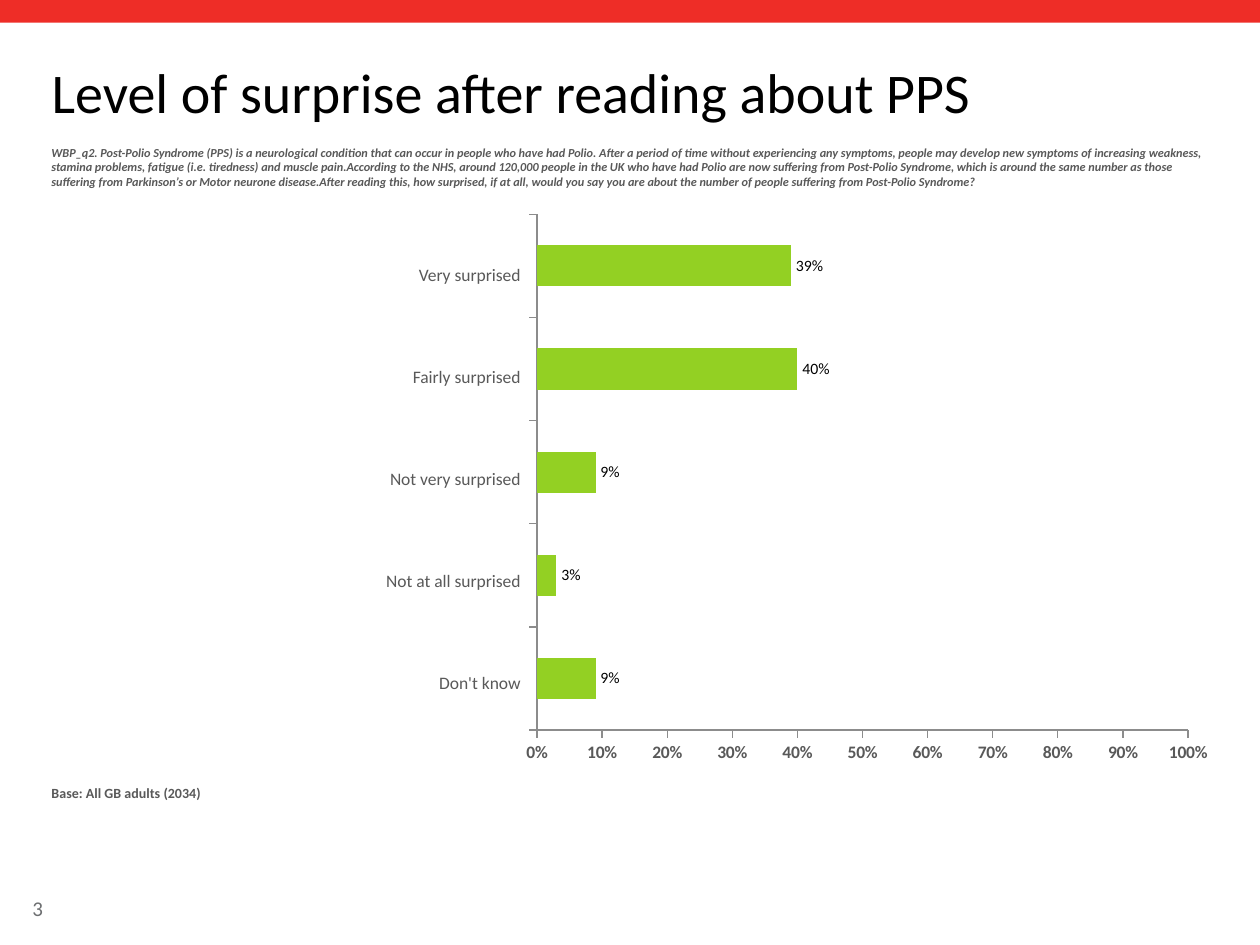
import pptx
import pptx.chart.data
import pptx.dml.color
import pptx.enum.chart
import pptx.enum.shapes
import pptx.enum.text
import pptx.oxml
import pptx.oxml.ns
import pptx.util

Inches = pptx.util.Inches
Pt = pptx.util.Pt
RGB = pptx.dml.color.RGBColor
Align = pptx.enum.text.PP_ALIGN
Anchor = pptx.enum.text.MSO_ANCHOR
Tick = pptx.enum.chart.XL_TICK_MARK
Label = pptx.enum.chart.XL_TICK_LABEL_POSITION

RED = RGB(0xEE, 0x2D, 0x27)
GREEN = RGB(0x93, 0xD0, 0x23)
BLACK = RGB(0, 0, 0)
DARK = RGB(0x59, 0x59, 0x59)
GRAY = RGB(0x6D, 0x6F, 0x71)
LINE = RGB(0x8C, 0x8C, 0x8C)
FONT = "Calibri"

LEFT, WIDTH = 0.31, 9.39
QUERY = (
    "WBP_q2. Post-Polio Syndrome (PPS) is a neurological condition that can occur in people "
    "who have had Polio. After a period of time without experiencing any symptoms, people may "
    "develop new symptoms of increasing weakness, stamina problems, fatigue (i.e. tiredness) "
    "and muscle pain.According to the NHS, around 120,000 people in the UK who have had Polio "
    "are now suffering from Post-Polio Syndrome, which is around the same number as those "
    "suffering from Parkinson’s or Motor neurone disease.After reading this, how surprised, "
    "if at all, would you say you are about the number of people suffering from Post-Polio "
    "Syndrome?"
)
LEVELS = ["Very surprised", "Fairly surprised", "Not very surprised",
          "Not at all surprised", "Don't know"]
SHARES = [0.39, 0.4, 0.09, 0.03, 0.09]


def style(font, size, color, bold=False, italic=False, name=FONT):
    font.name, font.size = name, Pt(size)
    font.bold, font.italic = bold, italic
    font.color.rgb = color


def write(slide, box, text, size=10, color=DARK, bold=False, italic=False,
          align=Align.LEFT, anchor=Anchor.TOP, shape=None):
    place = [Inches(n) for n in box]
    if shape is None:
        shape = slide.shapes.add_textbox(*place)
    else:
        shape.left, shape.top, shape.width, shape.height = place
    frame = shape.text_frame
    frame.word_wrap = True
    frame.auto_size = pptx.enum.text.MSO_AUTO_SIZE.NONE
    frame.vertical_anchor = anchor
    line = frame.paragraphs[0]
    line.alignment = align
    run = line.add_run()
    run.text = text
    style(run.font, size, color, bold, italic)


def add_band(slide, box):
    band = slide.shapes.add_shape(pptx.enum.shapes.MSO_SHAPE.RECTANGLE,
                                  *[Inches(n) for n in box])
    band.shadow.inherit = False
    band.fill.solid()
    band.fill.fore_color.rgb = RED
    band.line.fill.background()


def add_head(slide, box):
    left, top, width, height = box
    write(slide, (left, top, width, 0.76), "Level of surprise after reading about PPS",
          size=32, color=BLACK, anchor=Anchor.MIDDLE, shape=slide.shapes.title)
    write(slide, (left, top + 0.76, width, height - 0.76), QUERY,
          size=7, bold=True, italic=True)


def set_plot(chart, **parts):
    plot = chart.element.find(".//" + pptx.oxml.ns.qn("c:plotArea"))
    for old in plot.findall(pptx.oxml.ns.qn("c:layout")):
        plot.remove(old)
    sizes = "".join(f'<c:{key} val="{val}"/>' for key, val in parts.items())
    plot.insert(0, pptx.oxml.parse_xml(
        f'<c:layout {pptx.oxml.ns.nsdecls("c")}><c:manualLayout>'
        '<c:layoutTarget val="inner"/><c:xMode val="edge"/><c:yMode val="edge"/>'
        f'{sizes}</c:manualLayout></c:layout>'))


def set_axis(axis, label, bold=False):
    axis.has_major_gridlines = False
    axis.major_tick_mark = Tick.OUTSIDE
    axis.minor_tick_mark = Tick.NONE
    axis.tick_label_position = label
    axis.format.line.color.rgb = LINE
    axis.format.line.width = Pt(0.75)
    style(axis.tick_labels.font, 10, DARK, bold)


def add_bars(slide, box):
    data = pptx.chart.data.CategoryChartData(number_format="0%")
    data.categories = [str(n + 1) for n in range(len(SHARES))]
    data.add_series("Series 1", SHARES[::-1])
    chart = slide.shapes.add_chart(pptx.enum.chart.XL_CHART_TYPE.BAR_CLUSTERED,
                                   *[Inches(n) for n in box], data).chart
    chart.has_legend = chart.has_title = False
    style(chart.font, 18, GRAY, name="Manrope")
    set_plot(chart, x=0.034, y=0.02, w=0.918, h=0.904)

    set_axis(chart.category_axis, Label.NONE)
    axis = chart.value_axis
    set_axis(axis, Label.LOW, bold=True)
    axis.minimum_scale, axis.maximum_scale, axis.major_unit = 0, 1, 0.1
    axis.tick_labels.number_format = "0%"
    axis.tick_labels.number_format_is_linked = False

    plot = chart.plots[0]
    plot.gap_width, plot.overlap = 150, -10
    plot.vary_by_categories = False
    bars = plot.series[0]
    bars.format.fill.solid()
    bars.format.fill.fore_color.rgb = GREEN
    marks = bars.data_labels
    marks.show_value = True
    marks.number_format = "0%"
    marks.number_format_is_linked = False
    marks.position = pptx.enum.chart.XL_LABEL_POSITION.OUTSIDE_END
    style(marks.font, 9, BLACK)


def add_names(slide, box):
    left, top, width, height = box
    step = height / len(LEVELS)
    for row, name in enumerate(LEVELS):
        write(slide, (left, top + row * step, width, step), name,
              align=Align.RIGHT, anchor=Anchor.MIDDLE)


def add_foot(slide, box):
    left, top, width, height = box
    write(slide, (left, top, width, 0.43), "Base: All GB adults (2034)", size=8, bold=True)
    write(slide, (0.16, top + height - 0.3, 0.77, 0.3), "3",
          size=12, color=GRAY, anchor=Anchor.MIDDLE)


def main():
    deck = pptx.Presentation()
    deck.slide_width, deck.slide_height = Inches(10), Inches(7.5)
    slide = deck.slides.add_slide(deck.slide_layouts[5])
    add_band(slide, (0, 0, 10, 0.18))
    add_head(slide, (LEFT, 0.34, WIDTH, 1.27))
    add_bars(slide, (4.07, 1.61, 5.63, 4.53))
    add_names(slide, (0.16, 1.77, 4.07, 4.05))
    add_foot(slide, (LEFT, 6.18, WIDTH, 1.18))
    deck.save("out.pptx")


if __name__ == "__main__":
    main()
